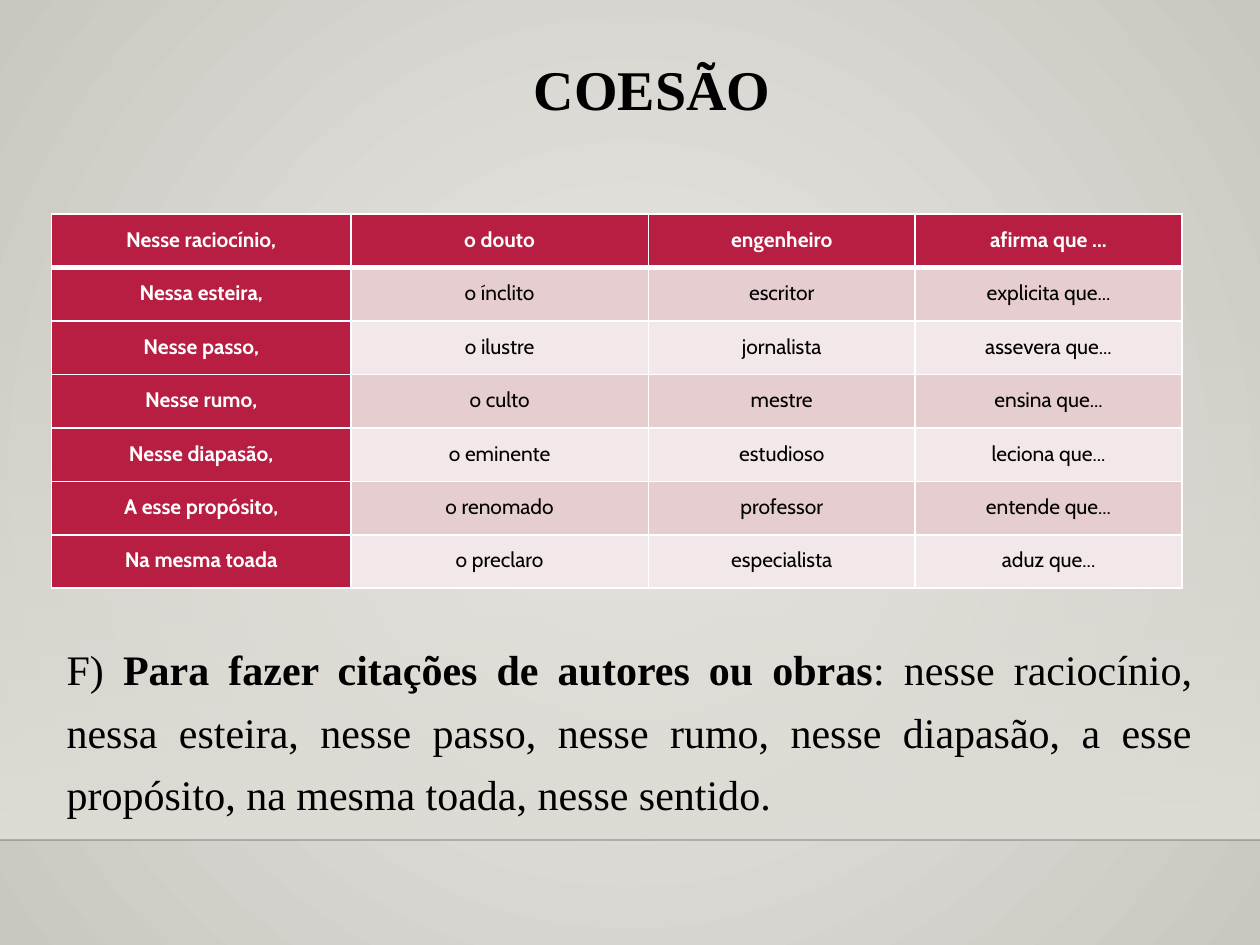
"""Build the COESÃO slide: title, table of citation phrases and explanation."""
from pptx import Presentation
from pptx.dml.color import RGBColor
from pptx.enum.shapes import MSO_CONNECTOR, MSO_SHAPE
from pptx.enum.text import MSO_ANCHOR, PP_ALIGN
from pptx.oxml import parse_xml
from pptx.oxml.ns import nsdecls, qn
from pptx.util import Pt

TITLE = "COESÃO"
ROWS = [
    ("Nesse raciocínio,", "o douto", "engenheiro", "afirma que ..."),
    ("Nessa esteira,", "o ínclito", "escritor", "explicita que..."),
    ("Nesse passo,", "o ilustre", "jornalista", "assevera que..."),
    ("Nesse rumo,", "o culto", "mestre", "ensina que..."),
    ("Nesse diapasão,", "o eminente", "estudioso", "leciona que..."),
    ("A esse propósito,", "o renomado", "professor", "entende que..."),
    ("Na mesma toada", "o preclaro", "especialista", "aduz que..."),
]
BODY = [
    ("F) ", False),
    ("Para fazer citações de autores ou obras", True),
    (": nesse raciocínio, nessa esteira, nesse passo, nesse rumo, nesse diapasão, "
     "a esse propósito, na mesma toada, nesse sentido.", False),
]
COL_WIDTHS = (171, 170, 152.5, 152.5)
ROW_HEIGHT = 30.55
WIDTH, HEIGHT, FLOOR = 720, 540, 480

BLACK = RGBColor(0x00, 0x00, 0x00)
WHITE = RGBColor(0xFF, 0xFF, 0xFF)
CRIMSON = RGBColor(0xB7, 0x1E, 0x42)
BANDS = (RGBColor(0xF3, 0xE8, 0xE9), RGBColor(0xE6, 0xCD, 0xCF))
BG_INNER = RGBColor(0xEC, 0xEA, 0xE7)
BG_OUTER = RGBColor(0xCA, 0xC7, 0xC1)
WALL = RGBColor(0xDF, 0xDB, 0xD5)
SERIF, SANS = "Times New Roman", "Cabin"

RADIAL = '<a:path path="circle"><a:fillToRect l="50000" t="50000" r="50000" b="50000"/></a:path>'
DOWNWARD = '<a:lin ang="5400000" scaled="0"/>'


def set_gradient(fill, element, stops, direction):
    """Give a fill two colour stops, each a colour and an opacity in percent."""
    fill.gradient()
    old = next(element.iter(qn("a:gradFill")))
    gs = "".join(
        f'<a:gs pos="{i * 100000}"><a:srgbClr val="{color}"><a:alpha val="{alpha * 1000}"/>'
        "</a:srgbClr></a:gs>" for i, (color, alpha) in enumerate(stops))
    old.getparent().replace(old, parse_xml(
        f'<a:gradFill {nsdecls("a")} rotWithShape="1"><a:gsLst>{gs}</a:gsLst>{direction}</a:gradFill>'))


def set_font(font, name, size, color, bold):
    """Set the main properties of a font."""
    font.name, font.size, font.bold = name, Pt(size), bold
    font.color.rgb = color


def set_borders(cell, widths):
    """Draw white borders, with widths given per side."""
    tc_pr = cell._tc.get_or_add_tcPr()
    for i, (side, width) in enumerate(widths.items()):
        tc_pr.insert(i, parse_xml(
            f'<a:ln{side} {nsdecls("a")} w="{Pt(width)}"><a:solidFill>'
            f'<a:srgbClr val="{WHITE}"/></a:solidFill></a:ln{side}>'))


def add_text(s, box, runs, font, size, align, spacing):
    """Add a one-paragraph text box made of (text, bold) runs."""
    tf = s.shapes.add_textbox(*map(Pt, box)).text_frame
    tf.word_wrap = True
    p = tf.paragraphs[0]
    p.alignment, p.line_spacing = align, spacing
    for text, bold in runs:
        r = p.add_run()
        r.text = text
        set_font(r.font, font, size, BLACK, bold)


def add_backdrop(s):
    """Paint the background, the wall and the floor line."""
    set_gradient(s.background.fill, s.element, [(BG_INNER, 100), (BG_OUTER, 100)], RADIAL)
    sp = s.shapes.add_shape(MSO_SHAPE.RECTANGLE, 0, Pt(158.4), Pt(WIDTH), Pt(FLOOR - 158.4))
    sp.shadow.inherit = False
    sp.line.fill.background()
    set_gradient(sp.fill, sp._element.spPr, [(WALL, 0), (WALL, 100)], DOWNWARD)
    line = s.shapes.add_connector(MSO_CONNECTOR.STRAIGHT, 0, Pt(FLOOR), Pt(WIDTH), Pt(FLOOR))
    line.line.width = Pt(1)
    line.line.color.rgb = BLACK
    color = next(line._element.spPr.iter(qn("a:srgbClr")))
    color.append(parse_xml(f'<a:alpha {nsdecls("a")} val="20000"/>'))
    line._element.spPr.append(parse_xml(f'<a:effectLst {nsdecls("a")}/>'))


def add_phrases(s):
    """Add the table with a crimson first row and first column."""
    table = s.shapes.add_table(
        len(ROWS), len(COL_WIDTHS), Pt(29.5), Pt(122.4),
        Pt(sum(COL_WIDTHS)), Pt(ROW_HEIGHT * len(ROWS))).table
    for column, width in zip(table.columns, COL_WIDTHS):
        column.width = Pt(width)
    for i, texts in enumerate(ROWS):
        table.rows[i].height = Pt(ROW_HEIGHT)
        for j, text in enumerate(texts):
            cell = table.cell(i, j)
            heading = i == 0 or j == 0
            cell.fill.solid()
            cell.fill.fore_color.rgb = CRIMSON if heading else BANDS[i % 2]
            cell.margin_left = cell.margin_right = Pt(5)
            cell.margin_top = cell.margin_bottom = 0
            cell.vertical_anchor = MSO_ANCHOR.TOP
            set_borders(cell, {"L": 1, "R": 1, "T": 3 if i == 1 else 1, "B": 3 if i == 0 else 1})
            p = cell.text_frame.paragraphs[0]
            p.text = text
            p.alignment, p.line_spacing = PP_ALIGN.CENTER, 1.5
            set_font(p.runs[0].font, SANS, 12, WHITE if heading else BLACK, heading)


def main():
    """Build and save the slide."""
    prs = Presentation()
    prs.slide_width, prs.slide_height = Pt(WIDTH), Pt(HEIGHT)
    s = prs.slides.add_slide(prs.slide_layouts[6])
    add_backdrop(s)
    add_text(s, (113.8, 31.7, 517.7, 67.7), [(TITLE, True)], SERIF, 32, PP_ALIGN.CENTER, 0.9)
    add_text(s, (31, 357.5, 657.4, 115), BODY, SERIF, 24, PP_ALIGN.JUSTIFY, 1.24)
    add_phrases(s)
    prs.save("out.pptx")


if __name__ == "__main__":
    main()
